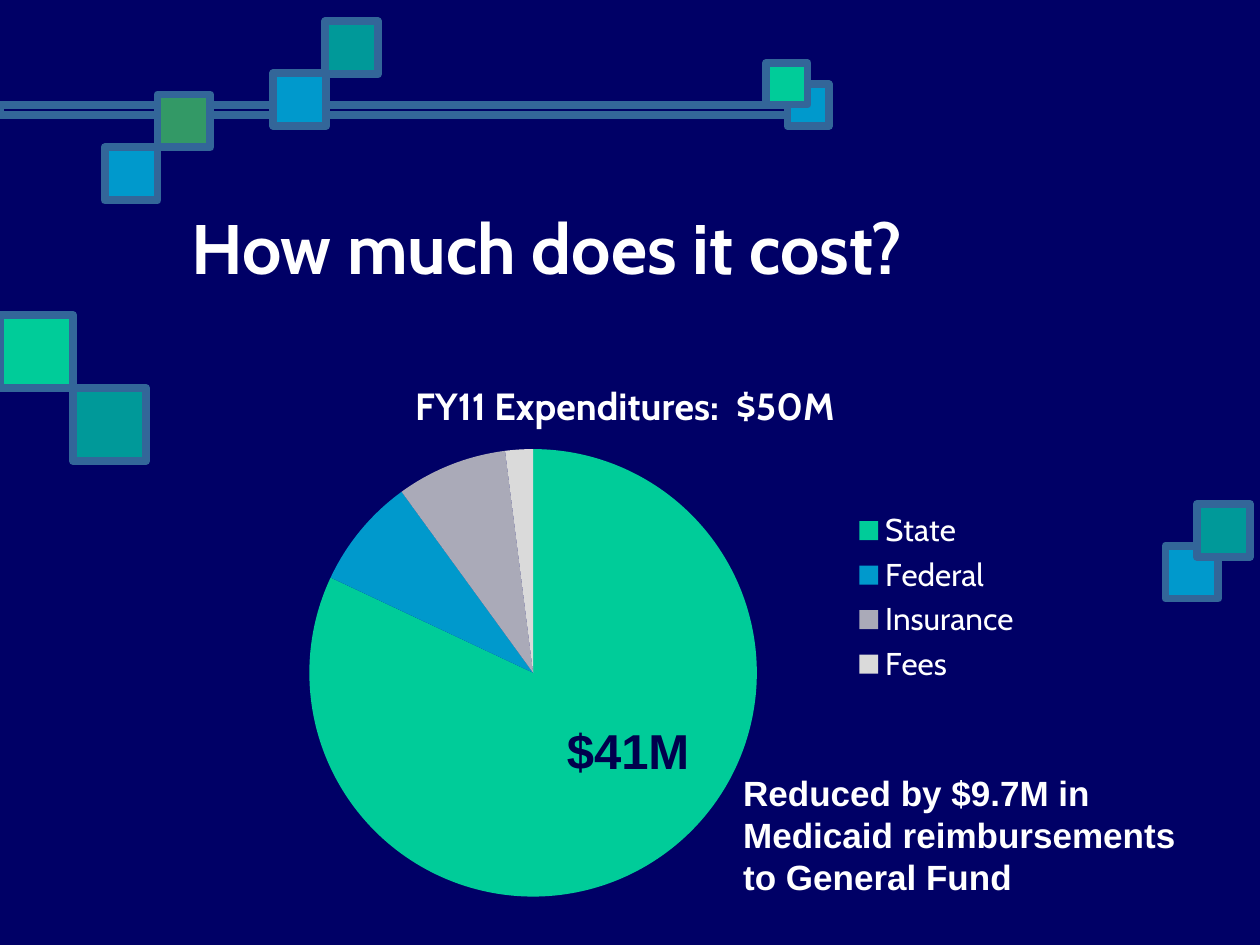
from typing import NamedTuple

from lxml.etree import SubElement
from pptx import Presentation
from pptx.chart.data import CategoryChartData
from pptx.dml.color import RGBColor
from pptx.enum.chart import XL_CHART_TYPE, XL_LEGEND_POSITION
from pptx.enum.shapes import MSO_SHAPE
from pptx.enum.text import MSO_ANCHOR, MSO_AUTO_SIZE
from pptx.oxml.ns import qn
from pptx.util import Inches, Pt

NAVY, STEEL, WHITE = "000066", "336699", "FFFFFF"
BLUE, MINT, TEAL, GREEN = "0099CC", "00CC99", "009999", "339966"


class Square(NamedTuple):
    left: float
    top: float
    size: float
    color: str


class Caption(NamedTuple):
    text: str
    left: float
    top: float
    width: float
    height: float
    size: int
    font: str = "Arial"
    color: str = WHITE
    wrap: bool = True
    anchor: MSO_ANCHOR = MSO_ANCHOR.TOP
    grow: bool = True


class Source(NamedTuple):
    name: str
    share: int
    color: str


SQUARES = [
    Square(6.25, 0.67, 0.33, BLUE),
    Square(6.08, 0.5, 0.33, MINT),
    Square(9.25, 4.33, 0.42, BLUE),
    Square(9.5, 4, 0.42, TEAL),
    Square(0, 2.5, 0.58, MINT),
    Square(0.58, 3.08, 0.58, TEAL),
    Square(2.17, 0.58, 0.42, BLUE),
    Square(0.83, 1.17, 0.42, BLUE),
    Square(1.25, 0.75, 0.42, GREEN),
    Square(2.58, 0.17, 0.42, TEAL),
]
HEADING = Caption("How much does it cost?", 1.42, 1.17, 8.58, 1.58, 40, "Cabin",
                  anchor=MSO_ANCHOR.MIDDLE, grow=False)
CAPTIONS = [
    Caption("Reduced by $9.7M in Medicaid reimbursements to General Fund",
            5.8, 6.07, 3.8, 1.11, 20),
    Caption("$41M", 4.4, 5.67, 1.19, 0.57, 28, color="00004D", wrap=False),
]
SOURCES = [
    Source("State", 82, MINT),
    Source("Federal", 8, BLUE),
    Source("Insurance", 8, "AAAAB8"),
    Source("Fees", 2, "DADADA"),
]


def paint(target, color: str) -> None:
    """Give a fill one solid colour."""
    target.solid()
    target.fore_color.rgb = RGBColor.from_string(color)


def style_font(font, size: float, name: str, color: str, bold: bool) -> None:
    font.size, font.name, font.bold = Pt(size), name, bold
    font.color.rgb = RGBColor.from_string(color)


def add_box(slide, left: float, top: float, width: float, height: float,
            color: str | None = None) -> None:
    """Add a steel-edged rectangle, hollow when no colour is given."""
    box = slide.shapes.add_shape(MSO_SHAPE.RECTANGLE, Inches(left), Inches(top),
                                 Inches(width), Inches(height))
    box.shadow.inherit = False
    if color:
        paint(box.fill, color)
    else:
        box.fill.background()
    paint(box.line.fill, STEEL)
    box.line.width = Pt(4.5)


def add_caption(slide, caption: Caption) -> None:
    frame = slide.shapes.add_textbox(
        Inches(caption.left), Inches(caption.top),
        Inches(caption.width), Inches(caption.height)).text_frame
    frame.word_wrap = caption.wrap
    frame.vertical_anchor = caption.anchor
    if caption.grow:
        frame.auto_size = MSO_AUTO_SIZE.SHAPE_TO_FIT_TEXT
    frame.text = caption.text
    style_font(frame.paragraphs[0].runs[0].font, caption.size, caption.font,
               caption.color, True)


def place(layout, x: float, y: float, w: float, h: float, inner: bool = False) -> None:
    """Fix a chart part's position as fractions of the chart area."""
    manual = SubElement(layout, qn("c:manualLayout"))
    settings = [("layoutTarget", "inner")] if inner else []
    settings += [("xMode", "edge"), ("yMode", "edge"),
                 ("x", x), ("y", y), ("w", w), ("h", h)]
    for tag, value in settings:
        SubElement(manual, qn(f"c:{tag}")).set("val", str(value))


def add_expenditure_pie(slide) -> None:
    data = CategoryChartData()
    data.categories = [source.name for source in SOURCES]
    data.add_series("Series 1", [source.share for source in SOURCES])
    chart = slide.shapes.add_chart(XL_CHART_TYPE.PIE, Inches(1.63), Inches(2.81),
                                   Inches(6.67), Inches(4.44), data).chart
    style_font(chart.font, 18, "Cabin", WHITE, False)

    chart.has_title = True
    title = chart.chart_title.text_frame
    title.text = "FY11 Expenditures:  $50M"
    style_font(title.paragraphs[0].runs[0].font, 21.6, "Cabin", WHITE, True)
    chart.chart_title.include_in_layout = False

    chart.has_legend = True
    chart.legend.position = XL_LEGEND_POSITION.RIGHT
    chart.legend.include_in_layout = False
    style_font(chart.legend.font, 18, "Cabin", WHITE, False)

    plot = chart.plots[0]
    plot.vary_by_categories = True
    for index, source in enumerate(SOURCES):
        slice_format = plot.series[0].points[index].format
        paint(slice_format.fill, source.color)
        slice_format.line.fill.background()

    plot_area = chart.element.find(".//" + qn("c:plotArea"))
    layout = plot_area.find(qn("c:layout"))
    if layout is None:
        layout = SubElement(plot_area, qn("c:layout"))
        plot_area.insert(0, layout)
    place(layout, 0.12, 0.17, 0.54, 0.8, inner=True)

    legend = chart.element.find(".//" + qn("c:legend"))
    layout = legend.find(qn("c:layout"))
    if layout is None:
        layout = SubElement(legend, qn("c:layout"))
        legend.find(qn("c:legendPos")).addnext(layout)
    place(layout, 0.76, 0.27, 0.22, 0.33)


def main() -> None:
    deck = Presentation()
    deck.slide_width, deck.slide_height = Inches(10), Inches(7.5)
    slide = deck.slides.add_slide(deck.slide_layouts[6])
    paint(slide.background.fill, NAVY)

    add_box(slide, 0, 0.83, 6.42, 0.08)
    for square in SQUARES:
        add_box(slide, square.left, square.top, square.size, square.size, square.color)
    add_caption(slide, HEADING)
    add_expenditure_pie(slide)
    for caption in CAPTIONS:
        add_caption(slide, caption)
    deck.save("out.pptx")


if __name__ == "__main__":
    main()
